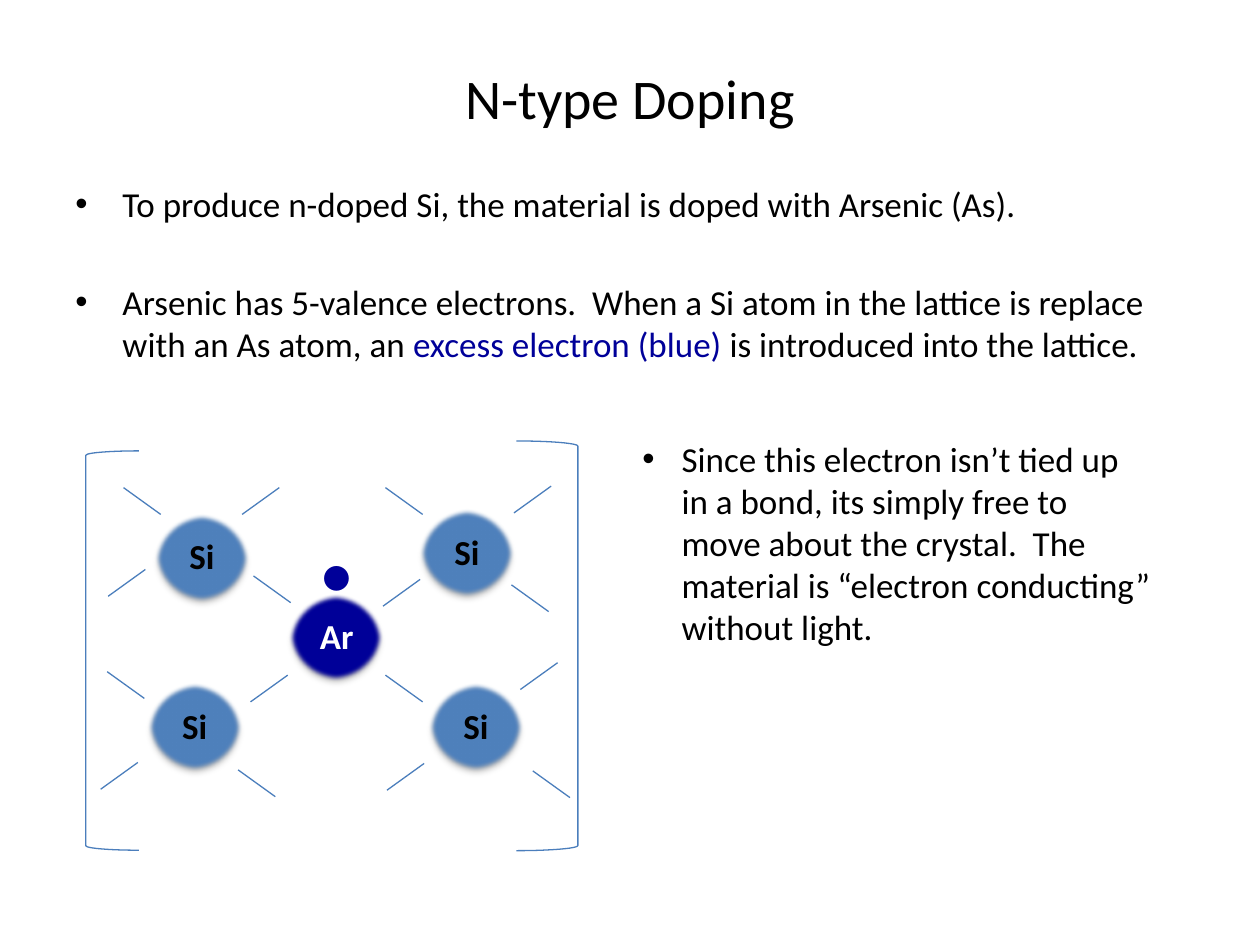
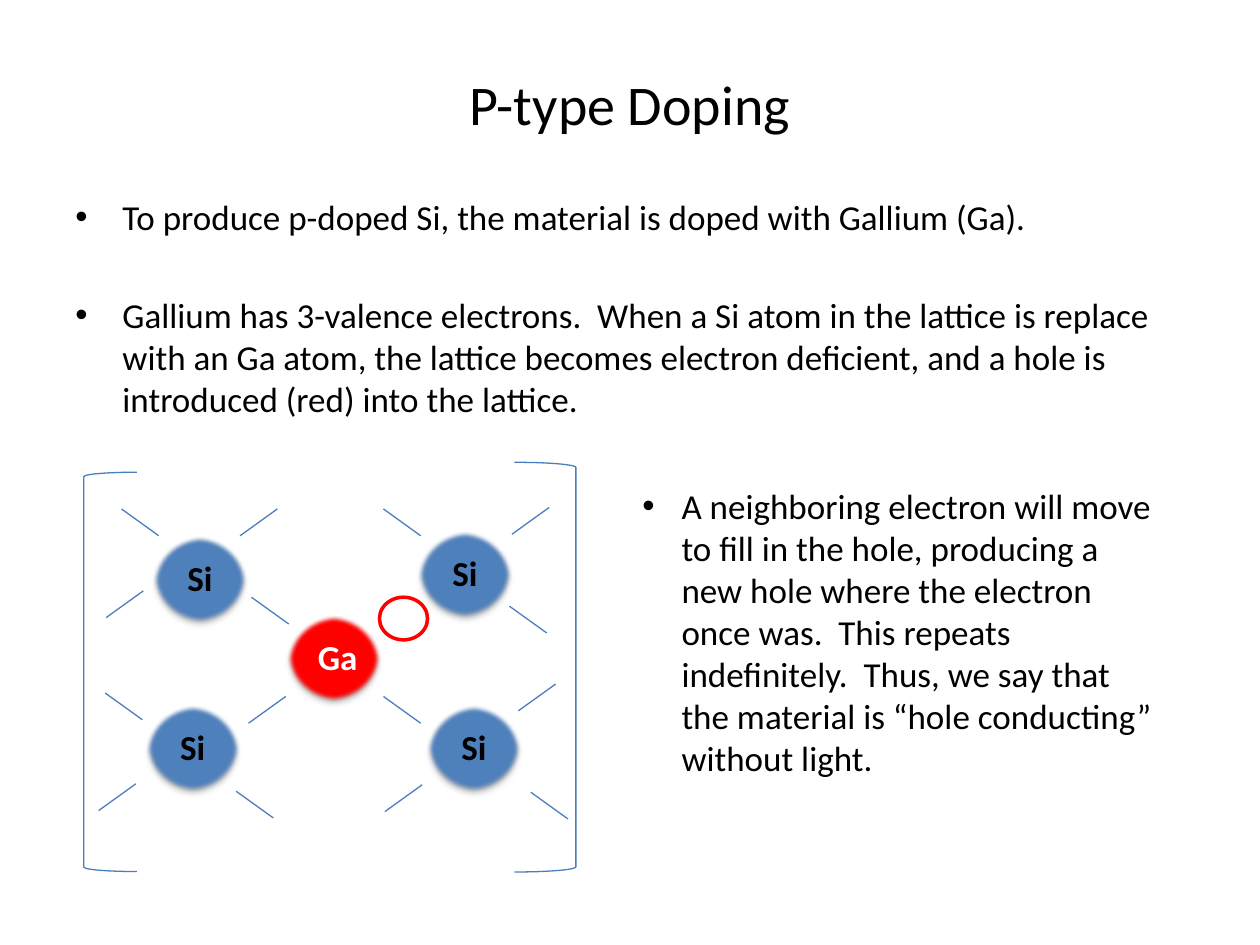
from dataclasses import dataclass

from lxml import etree
from pptx import Presentation
from pptx.dml.color import RGBColor
from pptx.enum.shapes import MSO_CONNECTOR, MSO_SHAPE
from pptx.enum.text import MSO_ANCHOR, PP_ALIGN
from pptx.oxml import parse_xml
from pptx.oxml.ns import nsdecls, qn
from pptx.util import Cm, Pt


@dataclass(frozen=True)
class Theme:
    font: str = "Calibri"
    title: int = 32
    body: int = 20
    electron: int = 40
    black: str = "000000"
    white: str = "FFFFFF"
    silicon: str = "4F81BD"
    line: str = "4B7EBC"
    blue: str = "000099"
    red: str = "FF0000"


T = Theme()

# Lattice geometry in cm, as placed on the first slide
ATOM_W, ATOM_H = 1.91, 1.78
DOPANT = (5.82, 11.96)
SILICON = [(8.46, 10.26), (8.64, 13.77), (3.12, 10.36), (2.97, 13.77)]
BOND_W, BOND_H = 0.75, 0.54
RISING = [(5.05, 13.61), (2.18, 11.48), (4.88, 9.83), (10.36, 9.8),
          (2.03, 15.37), (7.8, 15.39), (10.49, 13.36)]
FALLING = [(5.11, 11.61), (7.77, 13.61), (2.16, 13.54), (10.31, 11.79),
           (7.77, 9.83), (2.49, 9.83), (4.8, 15.52), (10.74, 15.54)]
DOPANT_BOND = (7.72, 11.68)
BRACKETS = [(MSO_SHAPE.LEFT_BRACKET, 1.73, 9.09, 1.07, 8.05),
            (MSO_SHAPE.RIGHT_BRACKET, 10.41, 8.89, 1.24, 8.26)]

SLIDES = [
    dict(
        title="N-type Doping", title_h=2.41, shift=(0, 0),
        body_top=3.56, body_h=12.57, note_top=8.69, note_h=4.52,
        dopant="Ar", dopant_color=T.blue, label_w=1.27, hole=False,
        body=[["To produce n-doped Si, the material is doped with Arsenic (As)."],
              ["Arsenic has 5-valence electrons.  When a Si atom in the lattice "
               "is replace with an As atom, an ",
               ("excess electron (blue)", T.blue),
               " is introduced into the lattice."]],
        note="Since this electron isn’t tied up in a bond, its simply free to "
             "move about the crystal.  The material is “electron conducting” "
             "without light."),
    dict(
        title="P-type Doping", title_h=2.62, shift=(-0.04, 0.43),
        body_top=3.81, body_h=5.51, note_top=9.65, note_h=6.25,
        dopant="Ga", dopant_color=T.red, label_w=1.52, hole=True,
        body=[["To produce p-doped Si, the material is doped with Gallium (Ga)."],
              ["Gallium has 3-valence electrons.  When a Si atom in the lattice "
               "is replace with an Ga atom, the lattice becomes electron "
               "deficient, and a hole is introduced (red) into the lattice."]],
        note="A neighboring electron will move to fill in the hole, producing a "
             "new hole where the electron once was.  This repeats indefinitely.  "
             "Thus, we say that the material is “hole conducting” without light."),
]


def write(tf, paras, size=T.body, color=T.black, bold=False, align=None,
          hang=0, gap=0):
    """Fill a frame; a paragraph is a list of strings or (string, color) runs."""
    tf.word_wrap = True
    for i, runs in enumerate(paras):
        p = tf.add_paragraph() if i else tf.paragraphs[0]
        p.alignment = align
        p.space_before = Pt(gap if i else 0)
        if hang:
            pPr = p._p.get_or_add_pPr()
            pPr.set("marL", str(Cm(hang)))
            pPr.set("indent", str(-Cm(hang)))
            etree.SubElement(pPr, qn("a:buFont")).set("typeface", "Arial")
            etree.SubElement(pPr, qn("a:buChar")).set("char", "•")
        for run in runs:
            text, run_color = (run, color) if isinstance(run, str) else run
            r = p.add_run()
            r.text = text
            r.font.name, r.font.size, r.font.bold = T.font, Pt(size), bold
            r.font.color.rgb = RGBColor.from_string(run_color)


def outline(shapes, kind, x, y, w, h, color, width):
    sp = shapes.add_shape(kind, Cm(x), Cm(y), Cm(w), Cm(h))
    sp.shadow.inherit = False
    sp.fill.background()
    sp.line.color.rgb = RGBColor.from_string(color)
    sp.line.width = Pt(width)


prs = Presentation()
prs.slide_width, prs.slide_height = Cm(25.4), Cm(19.05)

for d in SLIDES:
    s = prs.slides.add_slide(prs.slide_layouts[5])
    dx, dy = d["shift"]

    # Title
    title = s.shapes.title
    title.left, title.top = Cm(1.27), Cm(0.76)
    title.width, title.height = Cm(22.86), Cm(d["title_h"])
    title.text_frame.vertical_anchor = MSO_ANCHOR.MIDDLE
    write(title.text_frame, [[d["title"]]], size=T.title, align=PP_ALIGN.CENTER)

    # Explanation above the lattice
    tb = s.shapes.add_textbox(Cm(1.27), Cm(d["body_top"]), Cm(22.86), Cm(d["body_h"]))
    write(tb.text_frame, d["body"], hang=0.95, gap=32)

    # Atoms: the dopant, then its silicon neighbours
    atoms = [(DOPANT, d["dopant"], d["dopant_color"], T.white, 0.38, d["label_w"])]
    atoms += [(pos, "Si", T.silicon, T.black, 0.45, 1.27) for pos in SILICON]
    for (x, y), symbol, fill, color, inset, label_w in atoms:
        x, y = x + dx, y + dy
        grp = s.shapes.add_group_shape()
        sp = grp.shapes.add_shape(MSO_SHAPE.OVAL, Cm(x), Cm(y), Cm(ATOM_W), Cm(ATOM_H))
        sp.fill.solid()
        sp.fill.fore_color.rgb = RGBColor.from_string(fill)
        sp.line.fill.background()
        sp.shadow.inherit = False
        effects = sp._element.spPr.find(qn("a:effectLst"))
        effects.append(parse_xml(
            f'<a:outerShdw {nsdecls("a")} blurRad="{Pt(3.5)}" dist="{Pt(2.2)}" '
            f'dir="5400000" rotWithShape="0"><a:srgbClr val="{T.black}">'
            '<a:alpha val="32000"/></a:srgbClr></a:outerShdw>'))
        etree.SubElement(effects, qn("a:softEdge")).set("rad", str(Pt(2.5)))
        tb = grp.shapes.add_textbox(Cm(x + inset), Cm(y + 0.3), Cm(label_w), Cm(1.11))
        write(tb.text_frame, [[symbol]], color=color, bold=True)

    # Bonds
    rising = RISING if d["hole"] else RISING + [DOPANT_BOND]
    bonds = [(x, y, BOND_H, 0) for x, y in rising]
    bonds += [(x, y, 0, BOND_H) for x, y in FALLING]
    for x, y, start, end in bonds:
        x, y = x + dx, y + dy
        cn = s.shapes.add_connector(MSO_CONNECTOR.STRAIGHT, Cm(x), Cm(y + start),
                                    Cm(x + BOND_W), Cm(y + end))
        cn.line.color.rgb = RGBColor.from_string(T.line)
        cn.line.width = Pt(0.75)
        etree.SubElement(cn._element.spPr, qn("a:effectLst"))

    # Brackets around the lattice
    for kind, x, y, w, h in BRACKETS:
        outline(s.shapes, kind, x + dx, y + dy, w, h, T.line, 0.75)

    # Charge carrier: a hole or an excess electron
    if d["hole"]:
        outline(s.shapes, MSO_SHAPE.OVAL, 7.65, 12.04, 0.97, 0.86, T.red, 2)
    else:
        tb = s.shapes.add_textbox(Cm(6.2), Cm(10.54), Cm(1.07), Cm(1.96))
        write(tb.text_frame, [["•"]], size=T.electron, color=T.blue)

    # Conclusion beside the lattice
    tb = s.shapes.add_textbox(Cm(12.7), Cm(d["note_top"]), Cm(10.8), Cm(d["note_h"]))
    write(tb.text_frame, [[d["note"]]], hang=0.79)

prs.save("out.pptx")
